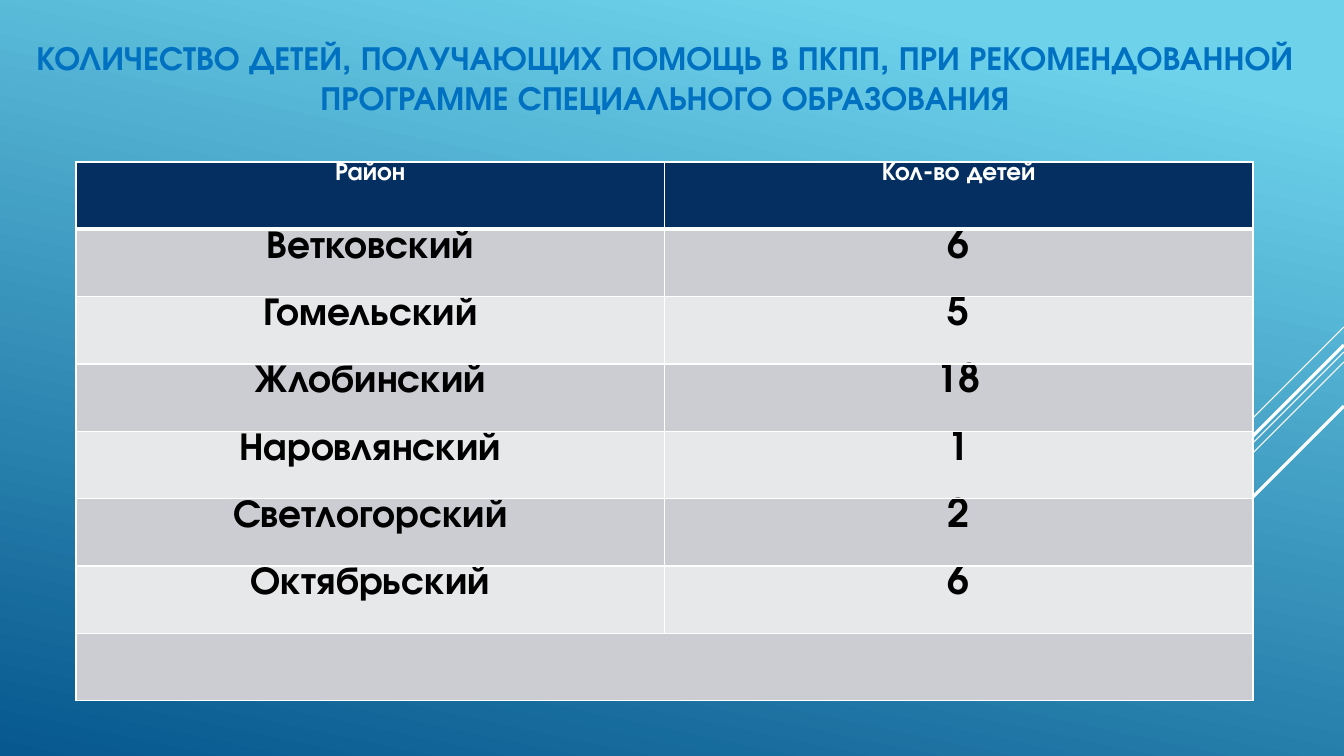
from lxml.etree import SubElement
from pptx import Presentation
from pptx.dml.color import RGBColor
from pptx.enum.shapes import MSO_CONNECTOR
from pptx.enum.text import MSO_ANCHOR, PP_ALIGN
from pptx.oxml import parse_xml
from pptx.oxml.ns import nsdecls, qn
from pptx.util import Emu, Pt

COLORS = {
    "sky": "6ED2EB", "sea": "06588E", "title": "0070C0", "header": "052F61",
    "odd": "CCCDD2", "even": "E7E8EA", "white": "FFFFFF", "black": "000000",
}
FONT = "TeX Gyre Adventor"
WIDTH, HEIGHT = 1344, 756
TITLE = ("КОЛИЧЕСТВО ДЕТЕЙ, ПОЛУЧАЮЩИХ ПОМОЩЬ В ПКПП, ПРИ РЕКОМЕНДОВАННОЙ "
         "ПРОГРАММЕ СПЕЦИАЛЬНОГО ОБРАЗОВАНИЯ")
DISTRICTS = [
    ("Район", "Кол-во детей"),
    ("Ветковский", "6"),
    ("Гомельский", "5"),
    ("Жлобинский", "18"),
    ("Наровлянский", "1"),
    ("Светлогорский", "2"),
    ("Октябрьский", "6"),
    ("", ""),
]
RAYS = [(327, 101, 0.75), (352, 329, 0.75), (362, 209, 0.75),
        (345, 193, 2.25), (406, 140, 2.25)]


def px(length):
    return Emu(round(length * 914400 / 100.8))


def color(name):
    return RGBColor.from_string(COLORS[name])


def write(frame, text, size, ink, bold=True, align=PP_ALIGN.CENTER):
    paragraph = frame.paragraphs[0]
    paragraph.alignment = align
    run = paragraph.add_run()
    run.text = text
    run.font.name = FONT
    run.font.size = Pt(size)
    run.font.bold = bold
    run.font.color.rgb = color(ink)


class DistrictSlide:
    """Draws the elements of the slide in one shared style."""

    def __init__(self, presentation):
        self.slide = presentation.slides.add_slide(presentation.slide_layouts[6])
        self.shapes = self.slide.shapes

    def background(self, start, end, angle):
        fill = self.slide.background.fill
        fill.gradient()
        fill.gradient_angle = 360 - angle
        for stop, name, position in zip(fill.gradient_stops, (start, end), (0.1, 1)):
            stop.color.rgb = color(name)
            stop.position = position

    def ray(self, top, run, weight):
        ray = self.shapes.add_connector(
            MSO_CONNECTOR.STRAIGHT, px(WIDTH), px(top), px(WIDTH - run), px(top + run))
        ray.line.color.rgb = color("white")
        ray.line.width = Pt(weight)
        SubElement(ray._element.spPr, qn("a:effectLst"))

    def title(self, text, left, top, width, height):
        frame = self.shapes.add_textbox(px(left), px(top), px(width), px(height)).text_frame
        frame.word_wrap = True
        frame.vertical_anchor = MSO_ANCHOR.MIDDLE
        write(frame, text, 24, "title")

    def borders(self, cell, row):
        weights = {"L": 1, "R": 1, "T": 3 if row == 1 else 1, "B": 3 if row == 0 else 1}
        properties = cell._tc.get_or_add_tcPr()
        for position, (side, weight) in enumerate(weights.items()):
            properties.insert(position, parse_xml(
                f'<a:ln{side} {nsdecls("a")} w="{Pt(weight)}"><a:solidFill>'
                f'<a:srgbClr val="{COLORS["white"]}"/></a:solidFill></a:ln{side}>'))

    def table(self, rows, left, top, width, height):
        table = self.shapes.add_table(
            len(rows), len(rows[0]), px(left), px(top), px(width), px(height)).table
        for row, texts in enumerate(rows):
            shade = "header" if row == 0 else "odd" if row % 2 else "even"
            size, ink = (18, "white") if row == 0 else (28, "black")
            for column, text in enumerate(texts):
                cell = table.cell(row, column)
                cell.margin_top = cell.margin_bottom = 0
                cell.fill.solid()
                cell.fill.fore_color.rgb = color(shade)
                self.borders(cell, row)
                if text:
                    write(cell.text_frame, text, size, ink)
        last = len(rows) - 1
        table.cell(last, 0).merge(table.cell(last, len(rows[0]) - 1))


def main():
    presentation = Presentation()
    presentation.slide_width, presentation.slide_height = px(WIDTH), px(HEIGHT)
    page = DistrictSlide(presentation)
    page.background("sky", "sea", 102)
    for ray in RAYS:
        page.ray(*ray)
    page.title(TITLE, 0, 16, 1330, 122)
    page.table(DISTRICTS, 76, 162, 1177, 539)
    presentation.save("out.pptx")


if __name__ == "__main__":
    main()
